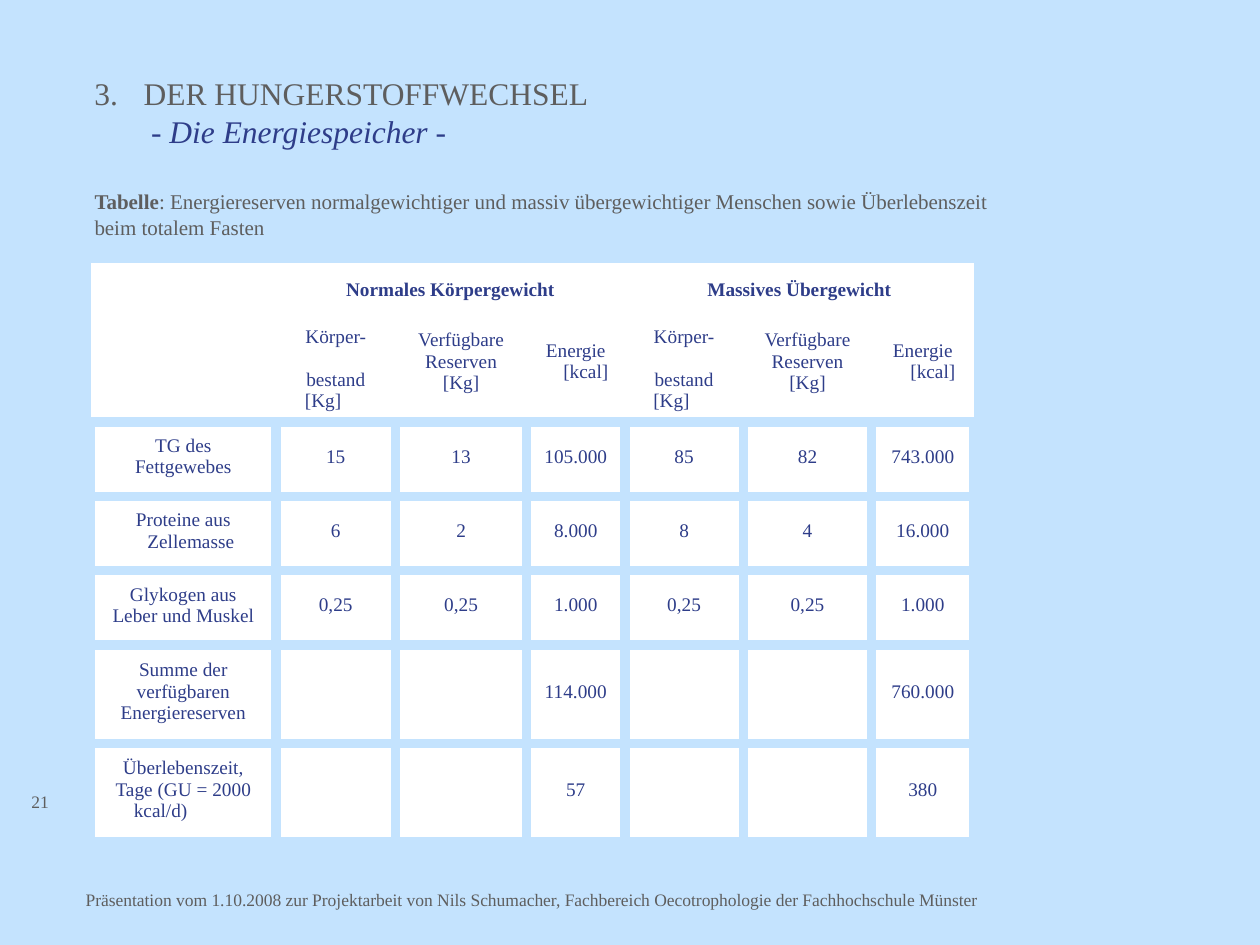
from lxml.etree import SubElement
from pptx import Presentation
from pptx.dml.color import RGBColor
from pptx.enum.text import MSO_ANCHOR, PP_ALIGN
from pptx.oxml.ns import qn
from pptx.util import Inches, Pt

FONT = "Times New Roman"
COLORS = {"sky": "C4E3FE", "white": "FFFFFF", "grey": "5E5E5E", "navy": "2E3D89"}

# Table grid in inches
COLS = [1.47, 0.95, 1.04, 0.78, 0.94, 1.02, 0.81]
ROWS = [0.42, 0.84] + [0.59] * 3 + [0.78] * 2
MEASURES = ["Körper-\nbestand\n[Kg]", "Verfügbare\nReserven\n[Kg]", "Energie\n[kcal]"]
CELLS = [
    ["", "Normales Körpergewicht", "", "", "Massives Übergewicht", "", ""],
    [""] + MEASURES * 2,
    ["TG des\nFettgewebes", "15", "13", "105.000", "85", "82", "743.000"],
    ["Proteine aus\nZellemasse", "6", "2", "8.000", "8", "4", "16.000"],
    ["Glykogen aus\nLeber und Muskel", "0,25", "0,25", "1.000", "0,25", "0,25", "1.000"],
    ["Summe der\nverfügbaren\nEnergiereserven", "", "", "114.000", "", "", "760.000"],
    ["Überlebenszeit,\nTage (GU = 2000\nkcal/d)", "", "", "57", "", "", "380"],
]
HEADER_ROWS = 2
# Sideways shift of a cell's last line, by the cell's first line
NUDGE = {"Körper-": -0.1, "Energie": 0.08, "Proteine aus": 0.06, "Überlebenszeit,": -0.18}
NO_STYLE = "{2D5ABB26-0587-4C30-8999-92F81FD0307C}"


def rgb(name):
    return RGBColor.from_string(COLORS[name])


def format_run(r, size, color, bold=False, italic=False):
    r.font.name, r.font.size = FONT, Pt(size)
    r.font.bold, r.font.italic = bold, italic
    r.font.color.rgb = rgb(color)


def add_text(s, left, top, width, height, text, size, color="grey", wrap=True):
    """Text box without side margins; returns its text frame."""
    sp = s.shapes.add_textbox(*map(Inches, (left, top, width, height)))
    tf = sp.text_frame
    tf.margin_left = tf.margin_right = tf.margin_bottom = 0
    tf.margin_top = Inches(0.01)
    tf.word_wrap = wrap
    tf.text = text
    for p in tf.paragraphs:
        for r in p.runs:
            format_run(r, size, color)
    return tf


def add_title(s):
    tf = add_text(s, 0.75, 0.58, 3.94, 0.63,
                  "3.\tDER HUNGERSTOFFWECHSEL\n- Die Energiespeicher -", 18)
    heading, subtitle = tf.paragraphs
    heading.space_before = Pt(1)
    tabs = SubElement(heading._p.get_or_add_pPr(), qn("a:tabLst"))
    SubElement(tabs, qn("a:tab"), pos=str(Inches(0.39)), algn="l")
    subtitle._p.get_or_add_pPr().set("marL", str(Inches(0.45)))
    format_run(subtitle.runs[0], 18, "navy", italic=True)


def add_caption(s):
    tf = add_text(s, 0.75, 1.49, 7.15, 0.43, "Tabelle", 12)
    p = tf.paragraphs[0]
    p.space_before = Pt(1)
    p.runs[0].font.bold = True
    r = p.add_run()
    r.text = (": Energiereserven normalgewichtiger und massiv übergewichtiger "
              "Menschen sowie Überlebenszeit beim totalem Fasten")
    format_run(r, 12, "grey")


def set_borders(cell, sides):
    """Wide sky-coloured borders on the given sides, none on the others."""
    tcPr = cell._tc.get_or_add_tcPr()
    for i, side in enumerate("LRTB"):
        ln = tcPr.makeelement(qn(f"a:ln{side}"), {"w": str(Pt(6))})
        tcPr.insert(i, ln)  # borders come before the fill
        if side in sides:
            fill = SubElement(ln, qn("a:solidFill"))
            SubElement(fill, qn("a:srgbClr"), val=COLORS["sky"])
        else:
            SubElement(ln, qn("a:noFill"))


def fill_cell(cell, text, row):
    cell.fill.solid()
    cell.fill.fore_color.rgb = rgb("white")
    cell.margin_left = cell.margin_right = cell.margin_top = 0
    hyphenated = text.startswith("Körper-")
    if row == 1 and not hyphenated:
        cell.margin_bottom = Inches(0.12)
    else:
        cell.margin_bottom = Inches(0.04 if row >= HEADER_ROWS else 0)
    cell.vertical_anchor = MSO_ANCHOR.MIDDLE
    if not text:
        return
    tf = cell.text_frame
    tf.text = text
    for i, p in enumerate(tf.paragraphs):
        p.alignment = PP_ALIGN.CENTER
        if hyphenated and i == 1:
            p.space_before = Pt(12)
        format_run(p.runs[0], 11, "navy", bold=row == 0)
    # A centred line moves by half of a one-sided margin
    shift = NUDGE.get(tf.paragraphs[0].text, 0)
    if shift:
        side = "marL" if shift > 0 else "marR"
        tf.paragraphs[-1]._p.get_or_add_pPr().set(side, str(Inches(2 * abs(shift))))


def add_energy_table(s):
    frame = s.shapes.add_table(len(ROWS), len(COLS), Inches(0.72), Inches(2.09),
                               Inches(sum(COLS)), Inches(sum(ROWS)))
    table = frame.table
    table.first_row = table.horz_banding = False
    table._tbl.tblPr.find(qn("a:tableStyleId")).text = NO_STYLE
    for column, width in zip(table.columns, COLS):
        column.width = Inches(width)
    for i, (row, height) in enumerate(zip(table.rows, ROWS)):
        row.height = Inches(height)
        sides = "LRTB" if i >= HEADER_ROWS else "B" * i
        for cell, text in zip(row.cells, CELLS[i]):
            fill_cell(cell, text, i)
            set_borders(cell, sides)
    # Group headings span three columns each
    for first in (1, 4):
        table.cell(0, first).merge(table.cell(0, first + 2))


def main():
    prs = Presentation()
    prs.slide_width, prs.slide_height = Inches(10), Inches(7.5)
    s = prs.slides.add_slide(prs.slide_layouts[6])
    s.background.fill.solid()
    s.background.fill.fore_color.rgb = rgb("sky")

    # Page number and footer
    number = add_text(s, 0.25, 6.27, 0.17, 0.2, "21", 10, wrap=False)
    number.paragraphs[0].space_before = Pt(1)
    footer = add_text(s, 0.68, 7.05, 7.13, 0.18,
                      "Präsentation vom 1.10.2008 zur Projektarbeit von Nils Schumacher, "
                      "Fachbereich Oecotrophologie der Fachhochschule Münster", 10, wrap=False)
    footer.paragraphs[0].line_spacing = Pt(11.9)

    # Content
    add_title(s)
    add_caption(s)
    add_energy_table(s)
    prs.save("out.pptx")


if __name__ == "__main__":
    main()
